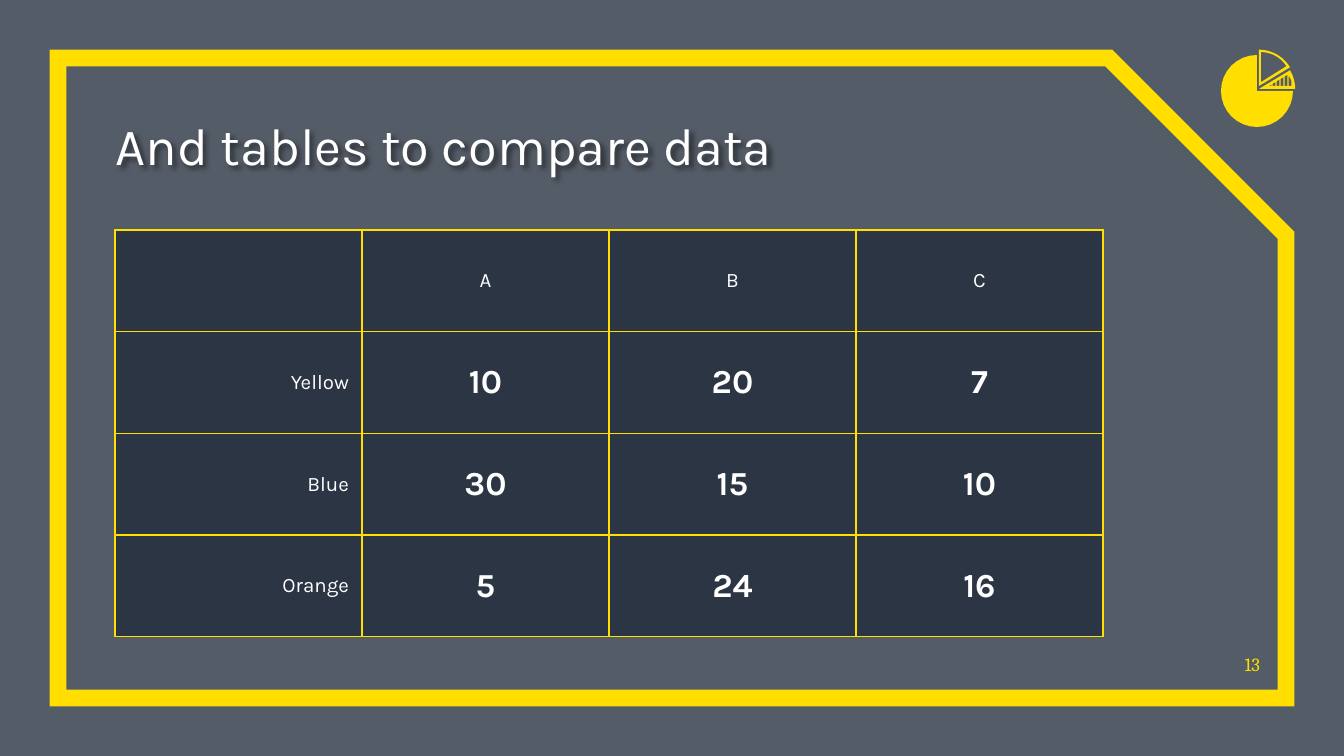
from math import cos, radians, sin

from lxml.etree import SubElement
from pptx import Presentation
from pptx.dml.color import RGBColor
from pptx.enum.shapes import MSO_SHAPE
from pptx.enum.text import MSO_ANCHOR, MSO_AUTO_SIZE, PP_ALIGN
from pptx.oxml.ns import qn
from pptx.util import Emu, Pt

SCALE = 9144000 / 1344  # EMU per px
YELLOW = RGBColor(0xFF, 0xDE, 0x00)
WHITE = RGBColor(0xFF, 0xFF, 0xFF)
SLATE = RGBColor(0x54, 0x5C, 0x67)
NAVY = RGBColor(0x04, 0x0F, 0x20)
BLACK = RGBColor(0x00, 0x00, 0x00)

ROWS = [
    ["", "A", "B", "C"],
    ["Yellow", "10", "20", "7"],
    ["Blue", "30", "15", "10"],
    ["Orange", "5", "24", "16"],
]


def px(n):
    return Emu(round(n * SCALE))


def add_color(parent, color, opacity=100):
    clr = SubElement(parent, qn("a:srgbClr"), val=str(color))
    SubElement(clr, qn("a:alpha"), val=str(opacity * 1000))


def format_text(tf, text, font, size, color, align, bold=False):
    p = tf.paragraphs[0]
    p.text = text
    p.alignment = align
    p.font.name = font
    p.font.size = Pt(size)
    p.font.bold = bold
    p.font.color.rgb = color


def prepare_frame(tf):
    tf.margin_left = tf.margin_right = tf.margin_top = tf.margin_bottom = 0
    tf.word_wrap = True
    tf.auto_size = MSO_AUTO_SIZE.NONE
    tf.vertical_anchor = MSO_ANCHOR.BOTTOM


def add_frame(s, x, y, w, h):
    sp = s.shapes.add_shape(MSO_SHAPE.SNIP_1_RECTANGLE, px(x), px(y), px(w), px(h))
    sp.adjustments[0] = 0.277
    sp.shadow.inherit = False
    sp.fill.background()
    sp.line.color.rgb = YELLOW
    sp.line.width = Pt(9)
    SubElement(sp.line._get_or_add_ln(), qn("a:miter"), lim="800000")


def place_title(s, x, y, w, h):
    title = s.shapes.title
    title.left, title.top, title.width, title.height = px(x), px(y), px(w), px(h)
    prepare_frame(title.text_frame)
    format_text(title.text_frame, "And tables to compare data", "Karla", 28,
                WHITE, PP_ALIGN.LEFT)
    # Soft shadow under the letters
    effects = SubElement(title._element.spPr, qn("a:effectLst"))
    shadow = SubElement(effects, qn("a:outerShdw"), blurRad="38100",
                        dist="25400", dir="2700000", algn="tl")
    add_color(shadow, BLACK, 50)


def add_borders(cell):
    tcPr = cell._tc.get_or_add_tcPr()
    for side in ("lnL", "lnR", "lnT", "lnB"):
        ln = SubElement(tcPr, qn(f"a:{side}"), w=str(Pt(0.75)))
        add_color(SubElement(ln, qn("a:solidFill")), YELLOW)


def add_data_table(s, x, y, w, h):
    rows, cols = len(ROWS), len(ROWS[0])
    table = s.shapes.add_table(rows, cols, px(x), px(y), px(w), px(h)).table
    table.first_row = table.horz_banding = False
    for col in table.columns:
        col.width = px(w / cols)
    for row in table.rows:
        row.height = px(h / rows)
    for i, values in enumerate(ROWS):
        for j, value in enumerate(values):
            cell = table.cell(i, j)
            add_borders(cell)
            cell.fill.solid()
            cell.fill.fore_color.rgb = NAVY
            clr = next(cell._tc.tcPr.find(qn("a:solidFill")).iterchildren())
            SubElement(clr, qn("a:alpha"), val="50000")
            cell.vertical_anchor = MSO_ANCHOR.MIDDLE
            cell.margin_left = cell.margin_right = px(13)
            cell.margin_top = cell.margin_bottom = px(10)
            is_value = i > 0 and j > 0
            align = PP_ALIGN.RIGHT if i > 0 and j == 0 else PP_ALIGN.CENTER
            format_text(cell.text_frame, value, "Karla", 18 if is_value else 11,
                        WHITE, align, is_value)


def add_page_number(s, x, y, w, h):
    tf = s.shapes.add_textbox(px(x), px(y), px(w), px(h)).text_frame
    prepare_frame(tf)
    format_text(tf, "13", "Cambria", 10, YELLOW, PP_ALIGN.RIGHT)


def sector(cx, cy, radius, start, end, steps=24):
    """Corner points of a pie slice; angles run counter-clockwise from the right."""
    angles = [radians(start + (end - start) * k / steps) for k in range(steps + 1)]
    return [(cx, cy)] + [(cx + radius * cos(a), cy - radius * sin(a)) for a in angles]


def add_outline(s, x, y, contours):
    """Draw closed contours, given in tenths of a px from (x, y)."""
    first, *others = contours
    builder = s.shapes.build_freeform(*first[0], scale=SCALE / 10)
    builder.add_line_segments(first[1:])
    for contour in others:
        builder.move_to(*contour[0])
        builder.add_line_segments(contour[1:])
    sp = builder.convert_to_shape(px(x), px(y))
    sp.shadow.inherit = False
    sp.fill.solid()
    sp.fill.fore_color.rgb = YELLOW
    sp.line.fill.background()


def add_pie_icon(s, x, y):
    # Three quarters of the pie
    add_outline(s, x, y, [sector(370, 410, 360, 90, 360)])
    # Striped slice, with gaps that follow its sloping edge
    gaps = []
    for k in range(6):
        left = 487 + 40 * k
        right = left + 27
        tops = [418 - 0.6 * (edge - 392) for edge in (left, right)]
        if k == 5:
            tops = [253, 306]
        gaps.append([(left, 360), (left, tops[0]), (right, tops[1]), (right, 360)])
    add_outline(s, x, y, [sector(392, 388, 360, 31, 0)] + gaps)
    # Hollow slice
    add_outline(s, x, y, [sector(390, 360, 362, 90, 31),
                          sector(410, 322, 300, 90, 32)])


def main():
    prs = Presentation()
    prs.slide_width, prs.slide_height = px(1344), px(756)
    s = prs.slides.add_slide(prs.slide_layouts[5])
    s.background.fill.solid()
    s.background.fill.fore_color.rgb = SLATE
    add_frame(s, 58, 58, 1228, 640)
    place_title(s, 116, 105, 988, 71)
    add_data_table(s, 115, 230, 988, 407)
    add_page_number(s, 1224, 637, 36, 38)
    add_pie_icon(s, 1220, 50)
    prs.save("out.pptx")


if __name__ == "__main__":
    main()
